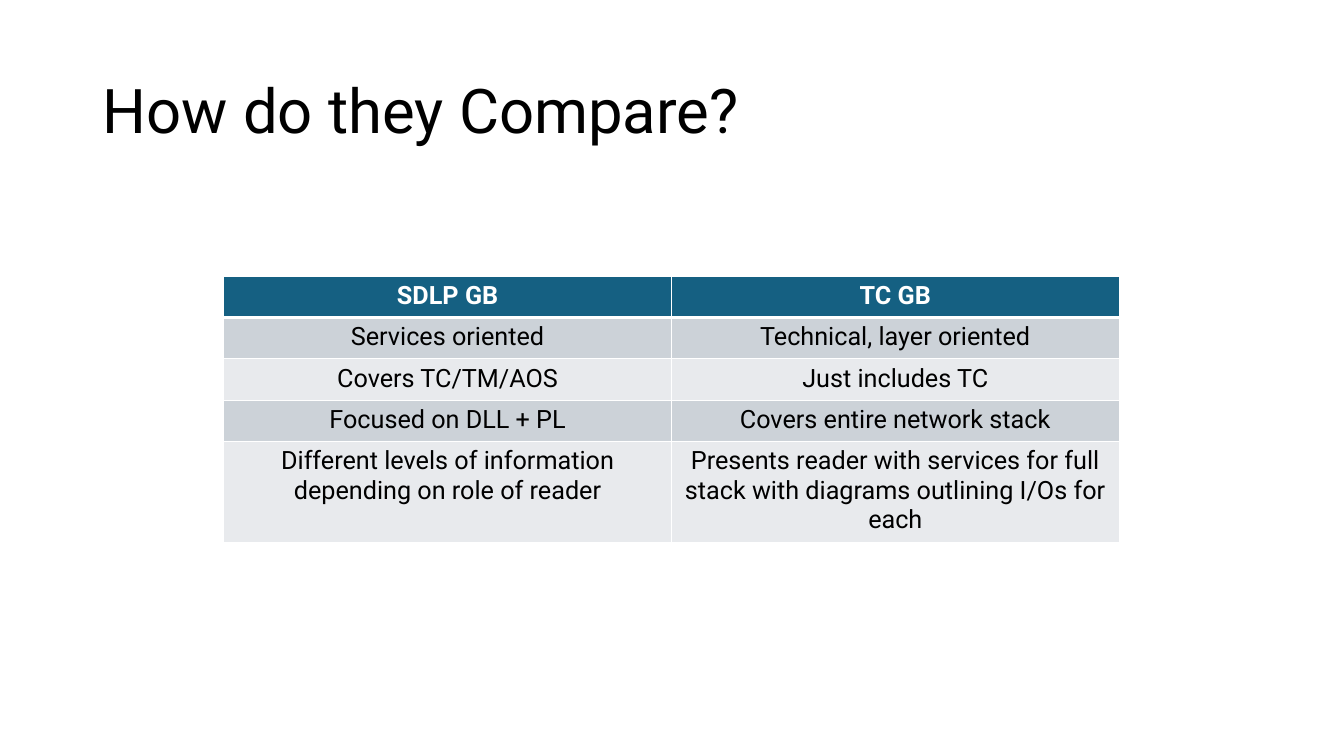
from lxml import etree
from pptx import Presentation
from pptx.dml.color import RGBColor
from pptx.enum.text import MSO_ANCHOR, PP_ALIGN
from pptx.oxml.ns import qn
from pptx.util import Inches, Pt

LEFT, CENTER = PP_ALIGN.LEFT, PP_ALIGN.CENTER
MIDDLE = MSO_ANCHOR.MIDDLE

FONT = "Roboto"
BLACK, WHITE = "000000", "FFFFFF"
HEADER_FILL = "156082"
BAND_FILLS = ("CCD2D8", "E8EAED")
THIN, THICK = 1, 3

COMPARISON = [
    ("SDLP GB", "TC GB"),
    ("Services oriented", "Technical, layer oriented"),
    ("Covers TC/TM/AOS", "Just includes TC"),
    ("Focused on DLL + PL", "Covers entire network stack"),
    ("Different levels of information depending on role of reader",
     "Presents reader with services for full stack with diagrams outlining I/Os for each"),
]
COLUMN_WIDTH = 4.44
ROW_HEIGHT, LAST_ROW_HEIGHT = 0.41, 0.98


def color(hex_value):
    return RGBColor.from_string(hex_value)


def write_text(frame, text, size=18, color_hex=BLACK, bold=False, align=LEFT, spacing=1.0):
    frame.word_wrap = True
    paragraph = frame.paragraphs[0]
    paragraph.alignment = align
    paragraph.line_spacing = spacing
    run = paragraph.add_run()
    run.text = text
    run.font.name = FONT
    run.font.size = Pt(size)
    run.font.bold = bold
    run.font.color.rgb = color(color_hex)


def add_title(slide, text):
    title = slide.shapes.add_textbox(Inches(0.92), Inches(0.4), Inches(11.5), Inches(1.45))
    title.text_frame.vertical_anchor = MIDDLE
    write_text(title.text_frame, text, size=44, spacing=0.9)


def set_borders(cell, top, bottom):
    """Draw white cell borders; top and bottom are widths in points."""
    properties = cell._tc.get_or_add_tcPr()
    for side, width in (("L", THIN), ("R", THIN), ("T", top), ("B", bottom)):
        line = etree.SubElement(properties, qn(f"a:ln{side}"), w=str(Pt(width)))
        fill = etree.SubElement(line, qn("a:solidFill"))
        etree.SubElement(fill, qn("a:srgbClr"), val=WHITE)


def add_comparison_table(slide, rows):
    heights = [ROW_HEIGHT] * (len(rows) - 1) + [LAST_ROW_HEIGHT]
    columns = len(rows[0])
    table = slide.shapes.add_table(
        len(rows), columns, Inches(2.22), Inches(2.74),
        Inches(COLUMN_WIDTH * columns), Inches(sum(heights))).table
    for column in table.columns:
        column.width = Inches(COLUMN_WIDTH)
    for r, (texts, height) in enumerate(zip(rows, heights)):
        table.rows[r].height = Inches(height)
        is_header = r == 0
        for c, text in enumerate(texts):
            cell = table.cell(r, c)
            set_borders(cell, top=THICK if r == 1 else THIN,
                        bottom=THICK if is_header else THIN)
            cell.fill.solid()
            cell.fill.fore_color.rgb = color(
                HEADER_FILL if is_header else BAND_FILLS[(r - 1) % 2])
            write_text(cell.text_frame, text, bold=is_header, align=CENTER,
                       color_hex=WHITE if is_header else BLACK)


def main():
    deck = Presentation()
    deck.slide_width, deck.slide_height = Inches(13.33), Inches(7.5)
    slide = deck.slides.add_slide(deck.slide_layouts[6])
    add_title(slide, "How do they Compare?")
    add_comparison_table(slide, COMPARISON)
    deck.save("out.pptx")


if __name__ == "__main__":
    main()
